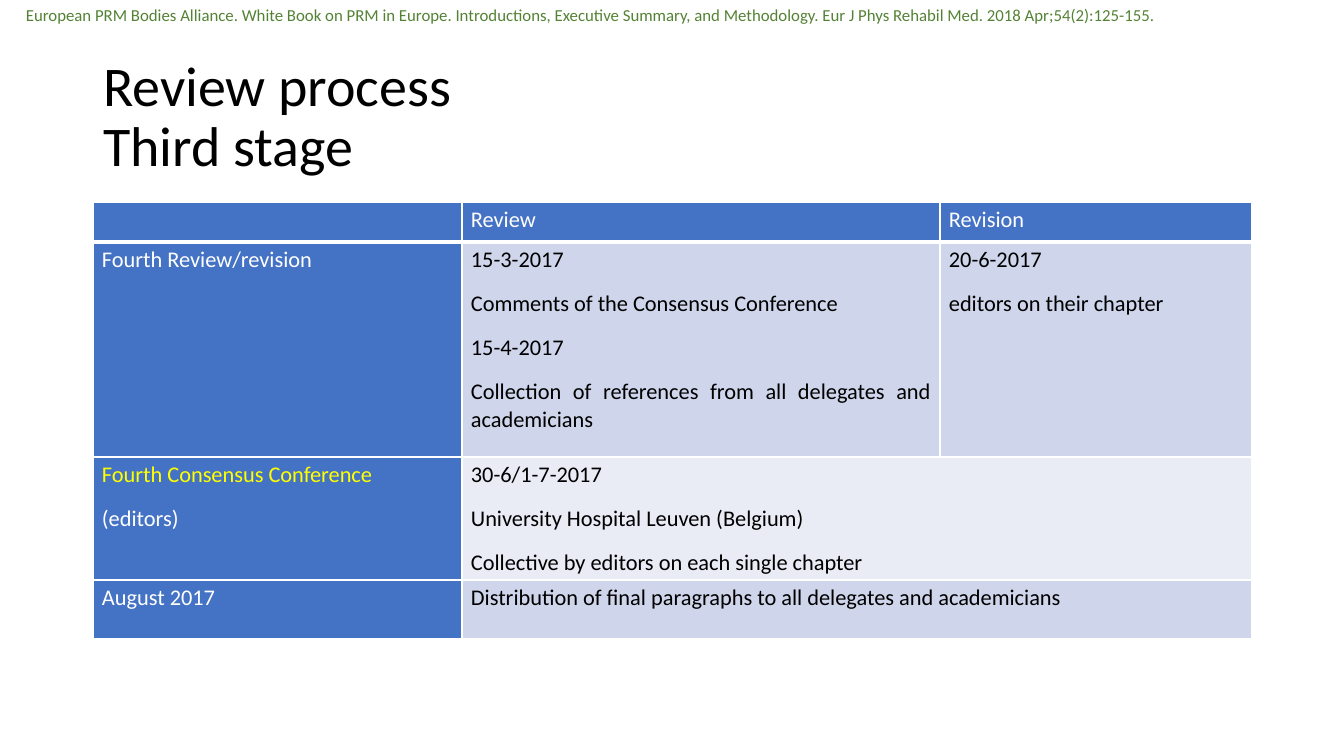
from lxml import etree
from pptx import Presentation
from pptx.dml.color import RGBColor
from pptx.enum.text import MSO_ANCHOR, MSO_AUTO_SIZE, PP_ALIGN
from pptx.oxml.ns import qn
from pptx.util import Pt

LEFT, JUSTIFY = PP_ALIGN.LEFT, PP_ALIGN.JUSTIFY
TOP, MIDDLE = MSO_ANCHOR.TOP, MSO_ANCHOR.MIDDLE
NO_AUTOFIT = MSO_AUTO_SIZE.NONE

CITATION = ("European PRM Bodies Alliance. White Book on PRM in Europe. Introductions, "
            "Executive Summary, and Methodology. Eur J Phys Rehabil Med. "
            "2018 Apr;54(2):125-155.")
TITLE_LINES = ["Review process", "Third stage"]
TABLE_ROWS = [
    [[], ["Review"], ["Revision"]],
    [["Fourth Review/revision"],
     ["15-3-2017", "Comments of the Consensus Conference", "15-4-2017",
      "Collection of references from all delegates and academicians"],
     ["20-6-2017", "editors on their chapter"]],
    [["Fourth Consensus Conference", "(editors)"],
     ["30-6/1-7-2017", "University Hospital Leuven (Belgium)",
      "Collective by editors on each single chapter"]],
    [["August 2017"],
     ["Distribution of final paragraphs to all delegates and academicians"]],
]
HIGHLIGHT = "Fourth Consensus Conference"

COLORS = {"header": "4472C4", "odd": "CFD5EA", "even": "E9EBF5", "white": "FFFFFF",
          "black": "000000", "yellow": "FFFF00", "green": "548235"}
FONT = "Calibri"
SLIDE_SIZE = (1344, 756)
CITATION_BOX = (16, 0, 1327, 30)
TITLE_BOX = (93, 51, 1159, 135)
TABLE_ORIGIN = (93, 202)
COLUMN_WIDTHS = [369, 478, 312]
ROW_HEIGHTS = [40, 215, 123, 59]


def px(length):
    return round(length * 914400 / 100.8)


def style_font(font, size, color):
    font.name, font.size, font.bold = FONT, Pt(size), False
    font.color.rgb = RGBColor.from_string(COLORS[color])


def set_borders(cell, bottom_width):
    """Draw white lines round a cell; they must precede its fill in the XML."""
    properties = cell._tc.get_or_add_tcPr()
    for index, side in enumerate(("lnL", "lnR", "lnT", "lnB")):
        width = bottom_width if side == "lnB" else 1
        line = etree.Element(qn("a:" + side), w=str(Pt(width)))
        fill = etree.SubElement(line, qn("a:solidFill"))
        etree.SubElement(fill, qn("a:srgbClr"), val=COLORS["white"])
        properties.insert(index, line)


def fill_cell(cell, lines, row, column):
    is_header = row == 0 or column == 0
    fill = "header" if is_header else ("odd" if row % 2 else "even")
    cell.fill.solid()
    cell.fill.fore_color.rgb = RGBColor.from_string(COLORS[fill])
    set_borders(cell, 3 if row == 0 else 1)
    cell.vertical_anchor = TOP
    cell.margin_left = cell.margin_right = px(9)
    cell.margin_top = cell.margin_bottom = px(4)
    frame = cell.text_frame
    for index, line in enumerate(lines):
        para = frame.add_paragraph() if index else frame.paragraphs[0]
        para.text = line
        para.alignment = JUSTIFY
        para.space_before = Pt(6 if index else 0)
        para.space_after = Pt(6)
        color = "white" if is_header else "black"
        style_font(para.runs[0].font, 16, "yellow" if line == HIGHLIGHT else color)


def add_citation(slide):
    box = slide.shapes.add_textbox(*map(px, CITATION_BOX))
    frame = box.text_frame
    frame.word_wrap = True
    frame.text = CITATION
    style_font(frame.paragraphs[0].runs[0].font, 12, "green")


def add_title(slide):
    title = slide.shapes.title
    title.left, title.top, title.width, title.height = map(px, TITLE_BOX)
    frame = title.text_frame
    frame.auto_size = NO_AUTOFIT
    frame.vertical_anchor = MIDDLE
    para = frame.paragraphs[0]
    para.alignment = LEFT
    para.line_spacing = 0.9
    for index, line in enumerate(TITLE_LINES):
        if index:
            para.add_line_break()
        span = para.add_run()
        span.text = line
        style_font(span.font, 40, "black")


def add_review_table(slide):
    size = (sum(COLUMN_WIDTHS), sum(ROW_HEIGHTS))
    table = slide.shapes.add_table(len(ROW_HEIGHTS), len(COLUMN_WIDTHS),
                                   *map(px, TABLE_ORIGIN + size)).table
    for column, width in zip(table.columns, COLUMN_WIDTHS):
        column.width = px(width)
    for row, height in zip(table.rows, ROW_HEIGHTS):
        row.height = px(height)
    last = len(COLUMN_WIDTHS) - 1
    for row, cells in enumerate(TABLE_ROWS):
        if len(cells) <= last:
            table.cell(row, len(cells) - 1).merge(table.cell(row, last))
        for column in range(last + 1):
            lines = cells[column] if column < len(cells) else []
            fill_cell(table.cell(row, column), lines, row, column)


def main():
    deck = Presentation()
    deck.slide_width, deck.slide_height = map(px, SLIDE_SIZE)
    slide = deck.slides.add_slide(deck.slide_layouts.get_by_name("Title Only"))
    add_citation(slide)
    add_title(slide)
    add_review_table(slide)
    deck.save("out.pptx")


if __name__ == "__main__":
    main()
